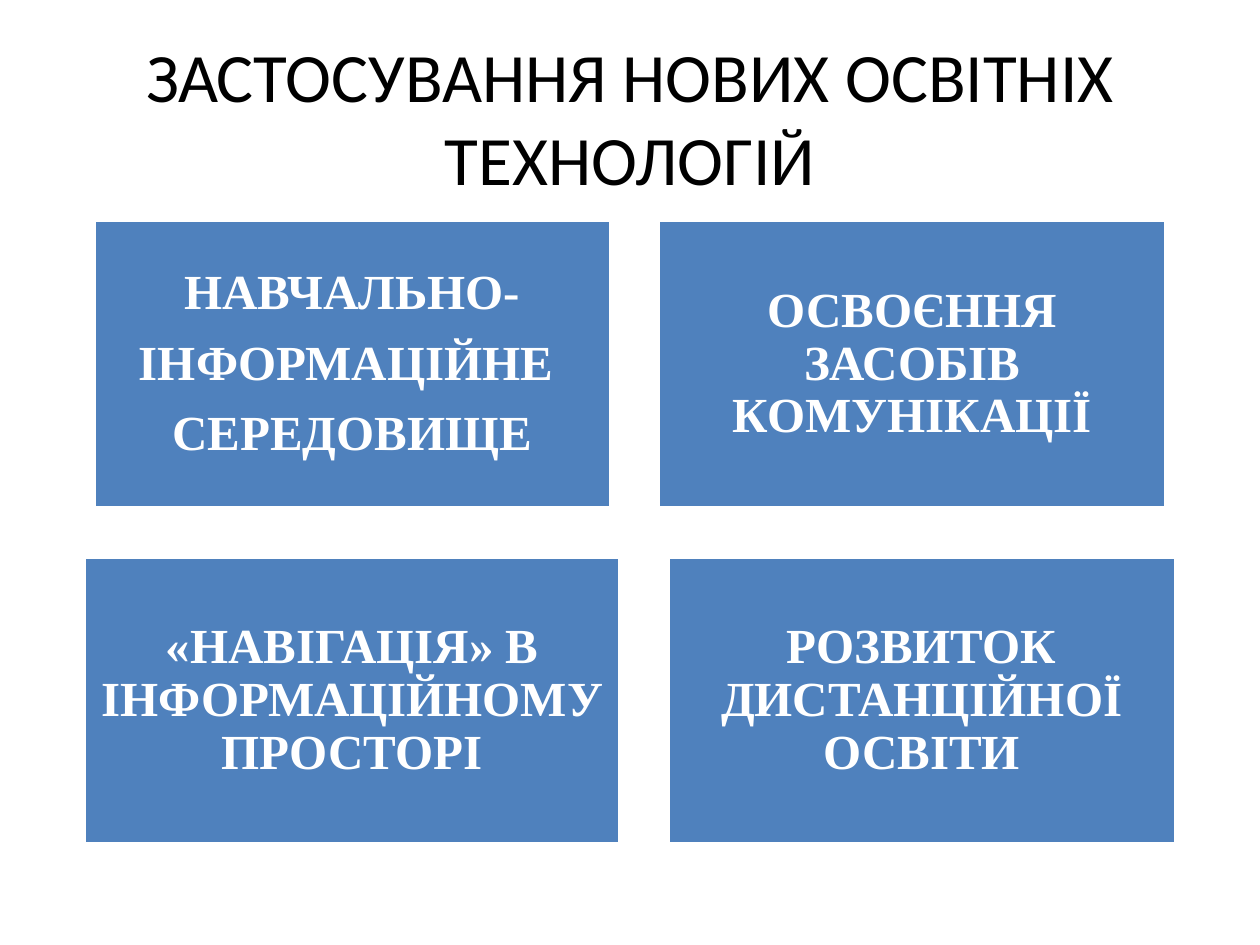
from pptx import Presentation
from pptx.dml.color import RGBColor
from pptx.enum.shapes import MSO_SHAPE
from pptx.enum.text import MSO_ANCHOR, PP_ALIGN
from pptx.util import Inches, Pt

RECT = MSO_SHAPE.RECTANGLE
MIDDLE = MSO_ANCHOR.MIDDLE
CENTER = PP_ALIGN.CENTER

WIDTH, HEIGHT = 10, 7.5
TOP, TALL, GAP, ROW_GAP = 1.75, 2.28, 0.38, 0.39
PAD = 0.12

COLORS = {"ink": "000000", "card": "4F81BD", "paper": "FFFFFF"}
TITLE = "ЗАСТОСУВАННЯ НОВИХ ОСВІТНІХ ТЕХНОЛОГІЙ"
TITLE_FONT = {"name": "Calibri", "size": Pt(39.6), "bold": False}
CARD_FONT = {"name": "Times New Roman", "size": Pt(28), "bold": True}
CARD_PARA = {"alignment": CENTER, "line_spacing": 0.9, "space_after": Pt(9.8)}

ROWS = [
    [
        (4.1, ["НАВЧАЛЬНО-", "ІНФОРМАЦІЙНЕ ", "СЕРЕДОВИЩЕ"]),
        (4.03, ["ОСВОЄННЯ ЗАСОБІВ КОМУНІКАЦІЇ"]),
    ],
    [
        (4.25, ["«НАВІГАЦІЯ» В ІНФОРМАЦІЙНОМУ ПРОСТОРІ"]),
        (4.03, ["РОЗВИТОК ДИСТАНЦІЙНОЇ ОСВІТИ"]),
    ],
]


def color(name):
    return RGBColor.from_string(COLORS[name])


def apply(target, values):
    for key, value in values.items():
        setattr(target, key, value)


def write(frame, lines, para, font, ink, pad):
    sides = ("left", "right", "top", "bottom")
    apply(frame, {"word_wrap": True, "vertical_anchor": MIDDLE})
    apply(frame, {f"margin_{side}": Inches(pad) for side in sides})
    for index, line in enumerate(lines):
        item = frame.add_paragraph() if index else frame.paragraphs[0]
        apply(item, para)
        run = item.add_run()
        run.text = line
        apply(run.font, font)
        run.font.color.rgb = color(ink)


def add_title(slide):
    box = slide.shapes.add_textbox(
        Inches(WIDTH * 0.05), Inches(HEIGHT * 0.04),
        Inches(WIDTH * 0.9), Inches(1.25),
    )
    write(box.text_frame, [TITLE], {"alignment": CENTER}, TITLE_FONT, "ink", 0.1)


def add_card(slide, left, top, wide, lines):
    card = slide.shapes.add_shape(
        RECT, Inches(left), Inches(top), Inches(wide), Inches(TALL)
    )
    card.shadow.inherit = False
    card.fill.solid()
    card.fill.fore_color.rgb = color("card")
    card.line.color.rgb = color("paper")
    card.line.width = Pt(2)
    write(card.text_frame, lines, CARD_PARA, CARD_FONT, "paper", PAD)


def add_row(slide, top, cards):
    total = sum(wide for wide, lines in cards) + GAP * (len(cards) - 1)
    left = (WIDTH - total) / 2
    for wide, lines in cards:
        add_card(slide, left, top, wide, lines)
        left += wide + GAP


def main():
    deck = Presentation()
    apply(deck, {"slide_width": Inches(WIDTH), "slide_height": Inches(HEIGHT)})
    slide = deck.slides.add_slide(deck.slide_layouts[6])
    add_title(slide)
    for index, cards in enumerate(ROWS):
        add_row(slide, TOP + index * (TALL + ROW_GAP), cards)
    deck.save("out.pptx")


if __name__ == "__main__":
    main()
